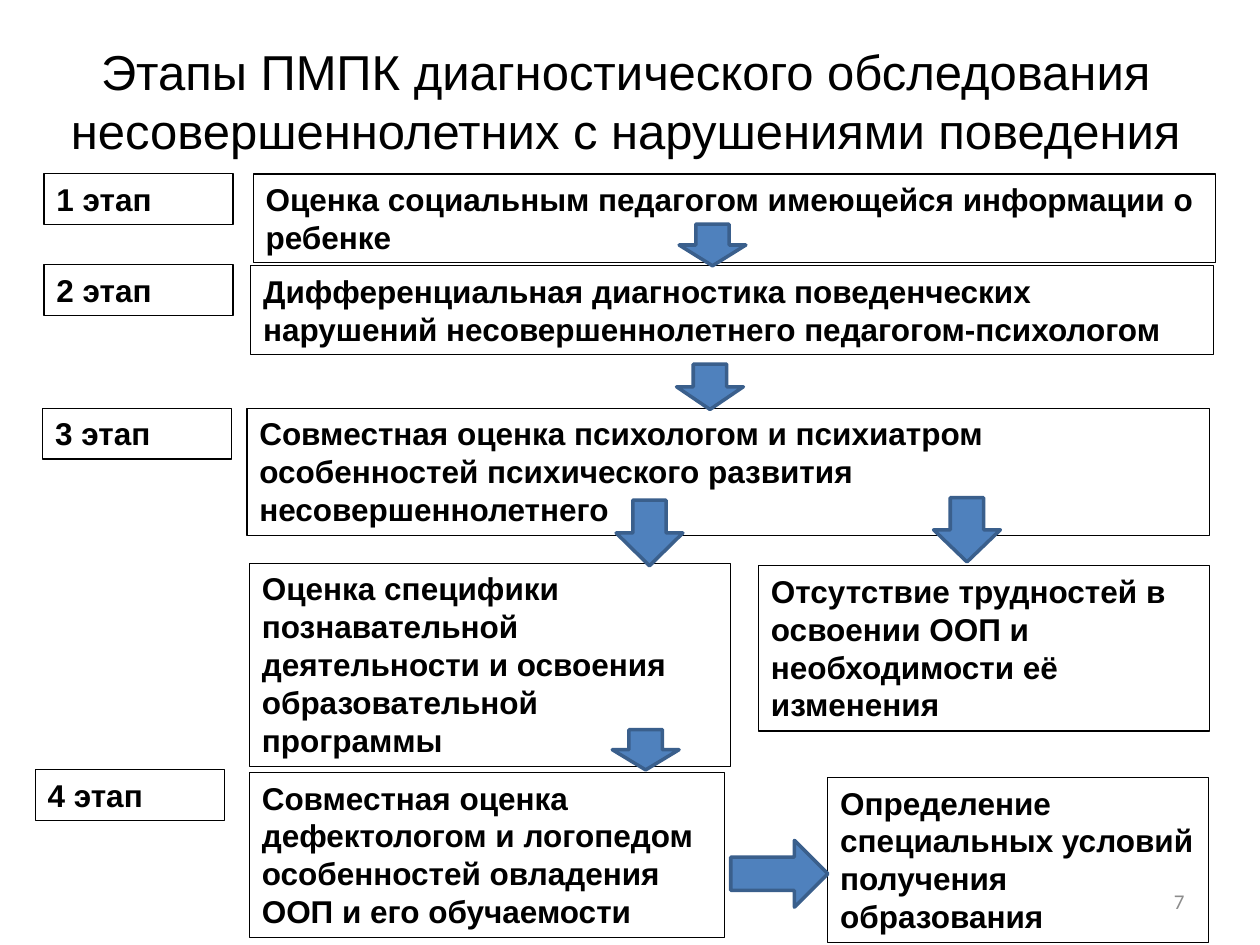
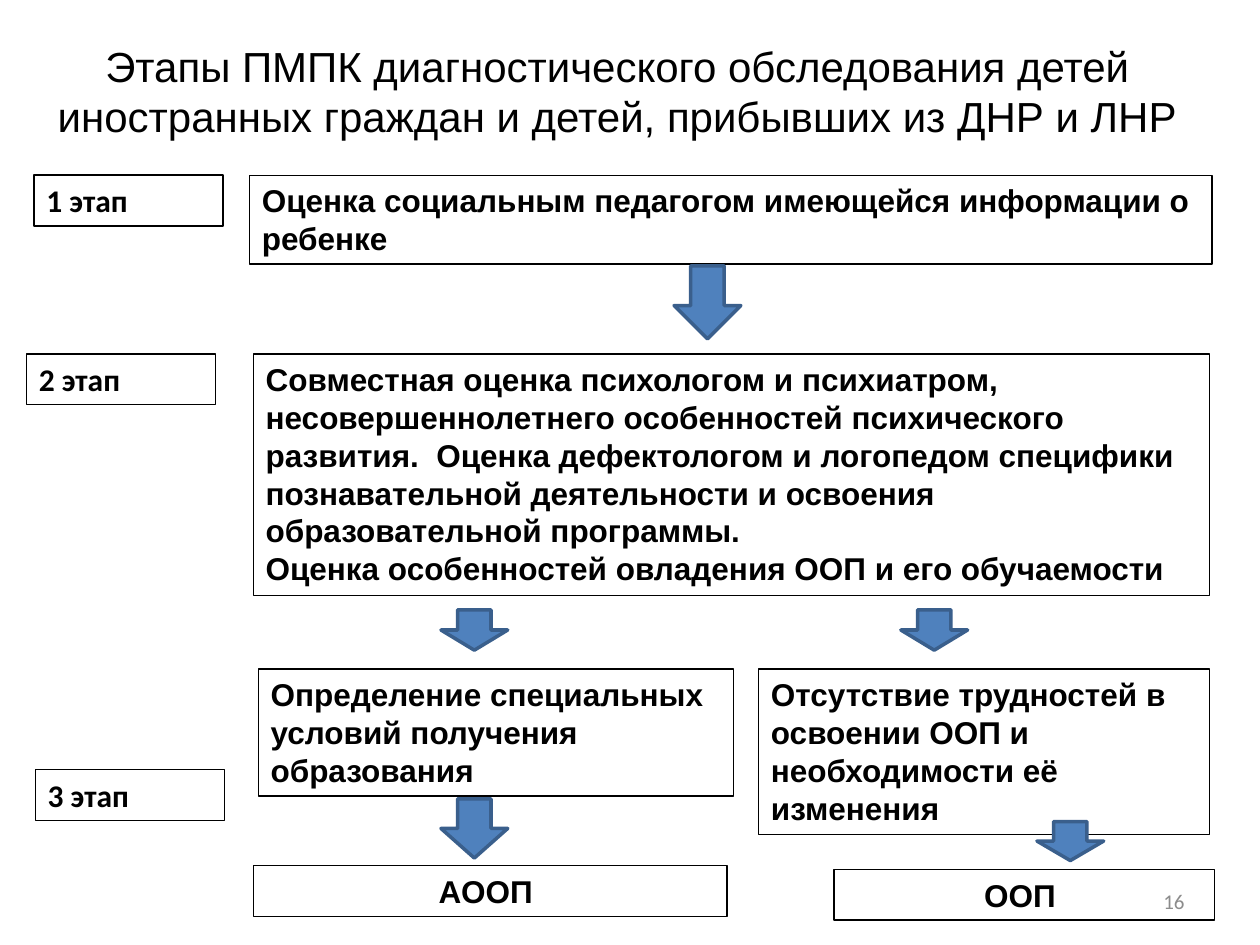
from pptx import Presentation
from pptx.dml.color import RGBColor
from pptx.enum import shapes, text
from pptx.util import Inches, Pt

BLACK, GREY = "000000", "8C8C8C"
ARROW_FILL, ARROW_EDGE = "4F81BD", "3A5F8C"
LEFT, CENTER, RIGHT = text.PP_ALIGN.LEFT, text.PP_ALIGN.CENTER, text.PP_ALIGN.RIGHT
LABEL_WIDTH = 1.5
ARROW_SPAN = 0.53  # breadth of every arrow
SOCIAL_REVIEW = "Оценка социальным педагогом имеющейся информации о ребенке"
NO_DIFFICULTIES = "Отсутствие трудностей в освоении ООП и необходимости её изменения"
SPECIAL_CONDITIONS = "Определение специальных условий получения образования"


def color(hex_string):
    return RGBColor.from_string(hex_string)


def inches(*lengths):
    return [Inches(length) for length in lengths]


def write(frame, content, size=18, font="Arial", ink=BLACK, bold=False,
          align=LEFT, anchor=text.MSO_ANCHOR.TOP, grow=False):
    """Fill a text frame, one paragraph per line of content."""
    frame.word_wrap = True
    frame.vertical_anchor = anchor
    fit = text.MSO_AUTO_SIZE
    frame.auto_size = fit.SHAPE_TO_FIT_TEXT if grow else fit.NONE
    for i, line in enumerate(content.split("\n")):
        paragraph = frame.paragraphs[0] if i == 0 else frame.add_paragraph()
        paragraph.alignment = align
        run = paragraph.add_run()
        run.text = line
        run.font.size, run.font.name, run.font.bold = Pt(size), font, bold
        run.font.color.rgb = color(ink)


def add_frame(slide, left, top, width, lines, content, **style):
    """Outlined box as tall as its number of text lines."""
    height = 0.1 + 0.303 * lines
    frame = slide.shapes.add_textbox(*inches(left, top, width, height))
    frame.line.color.rgb = color(BLACK)
    frame.line.width = Pt(0.75)
    write(frame.text_frame, content, bold=True, grow=True, **style)


def add_arrow(slide, kind, left, top, width, height):
    arrow = slide.shapes.add_shape(kind, *inches(left, top, width, height))
    arrow.shadow.inherit = False
    arrow.fill.solid()
    arrow.fill.fore_color.rgb = color(ARROW_FILL)
    arrow.line.color.rgb = color(ARROW_EDGE)
    arrow.line.width = Pt(2)


def add_titled_slide(deck, box, heading, size, number):
    """Title-only slide with its heading placed in the box."""
    slide = deck.slides.add_slide(deck.slide_layouts[5])
    title = slide.shapes.title
    title.left, title.top, title.width, title.height = inches(*box)
    write(title.text_frame, heading, size=size, align=CENTER,
          anchor=text.MSO_ANCHOR.MIDDLE)
    page = slide.shapes.add_textbox(*inches(7.17, 6.95, 2.33, 0.4))
    write(page.text_frame, str(number), size=12, font="Calibri", ink=GREY,
          align=RIGHT, anchor=text.MSO_ANCHOR.MIDDLE)
    return slide


def draw_stage_labels(slide, origin, offsets, font):
    """Numbered stage labels down the left side."""
    x, y = origin
    for number, (dx, dy) in enumerate(offsets, 1):
        add_frame(slide, x + dx, y + dy, LABEL_WIDTH, 1, f"{number} этап", font=font)


def draw_steps(slide, origin, steps):
    """Steps as (dx, dy, width, lines, content, align)."""
    x, y = origin
    for dx, dy, width, lines, content, align in steps:
        add_frame(slide, x + dx, y + dy, width, lines, content, align=align)


def draw_down_arrows(slide, origin, arrows):
    """Arrows as (dx, dy, length)."""
    x, y = origin
    for dx, dy, length in arrows:
        add_arrow(slide, shapes.MSO_SHAPE.DOWN_ARROW, x + dx, y + dy, ARROW_SPAN, length)


def build_behaviour_slide(deck):
    slide = add_titled_slide(
        deck, (0.2, 0.36, 9.53, 0.87),
        "Этапы ПМПК диагностического обследования несовершеннолетних "
        "с нарушениями поведения", 28, 7)
    draw_stage_labels(slide, (0.28, 1.38),
                      [(0.07, 0), (0.07, 0.72), (0.06, 1.86), (0, 4.73)], "Arial")
    flow = x, y = 1.96, 1.38
    draw_steps(slide, flow, [
        (0.05, 0, 7.64, 2, SOCIAL_REVIEW, LEFT),
        (0.03, 0.73, 7.64, 2, "Дифференциальная диагностика поведенческих нарушений "
         "несовершеннолетнего педагогом-психологом", LEFT),
        (0, 1.86, 7.64, 3, "Совместная оценка психологом и психиатром особенностей "
         "психического развития несовершеннолетнего", LEFT),
        (0.02, 3.09, 3.82, 5, "Оценка специфики познавательной деятельности и "
         "освоения образовательной программы", LEFT),
        (4.06, 3.11, 3.58, 4, NO_DIFFICULTIES, LEFT),
        (0.02, 4.75, 3.77, 4, "Совместная оценка дефектологом и логопедом "
         "особенностей овладения ООП и его обучаемости", LEFT),
        (4.61, 4.79, 3.02, 4, SPECIAL_CONDITIONS, LEFT),
    ])
    draw_down_arrows(slide, flow, [
        (3.43, 0.4, 0.33), (3.41, 1.51, 0.36), (2.93, 2.59, 0.52),
        (5.45, 2.57, 0.51), (2.9, 4.41, 0.32)])
    add_arrow(slide, shapes.MSO_SHAPE.RIGHT_ARROW, x + 3.84, y + 5.29, 0.77, ARROW_SPAN)


def build_newcomers_slide(deck):
    slide = add_titled_slide(
        deck, (0.28, 0.13, 9.24, 1.18),
        "Этапы ПМПК диагностического обследования детей иностранных граждан "
        "и детей, прибывших из ДНР и ЛНР", 24, 16)
    draw_stage_labels(slide, (0.21, 1.39),
                      [(0.06, 0), (0, 1.42), (0.07, 4.72)], "Calibri")
    flow = 1.98, 1.39
    draw_steps(slide, flow, [
        (0, 0, 7.64, 2, SOCIAL_REVIEW, LEFT),
        (0.03, 1.42, 7.59, 6, "Совместная оценка психологом и психиатром, "
         "несовершеннолетнего особенностей психического развития.  Оценка "
         "дефектологом и логопедом специфики познавательной деятельности и "
         "освоения образовательной программы.\n"
         "Оценка особенностей овладения ООП и его обучаемости", LEFT),
        (4.04, 3.92, 3.58, 4, NO_DIFFICULTIES, LEFT),
        (0.07, 3.92, 3.77, 3, SPECIAL_CONDITIONS, LEFT),
        (4.64, 5.51, 3.02, 1, "ООП ", CENTER),
        (0.03, 5.48, 3.76, 1, "АООП ", CENTER),
    ])
    draw_down_arrows(slide, flow, [
        (3.37, 0.72, 0.58), (1.52, 3.45, 0.32), (5.17, 3.45, 0.32),
        (6.25, 5.13, 0.31), (1.52, 4.95, 0.47)])


def main():
    deck = Presentation()
    deck.slide_width, deck.slide_height = inches(10, 7.5)
    build_behaviour_slide(deck)
    build_newcomers_slide(deck)
    deck.save("out.pptx")


if __name__ == "__main__":
    main()
